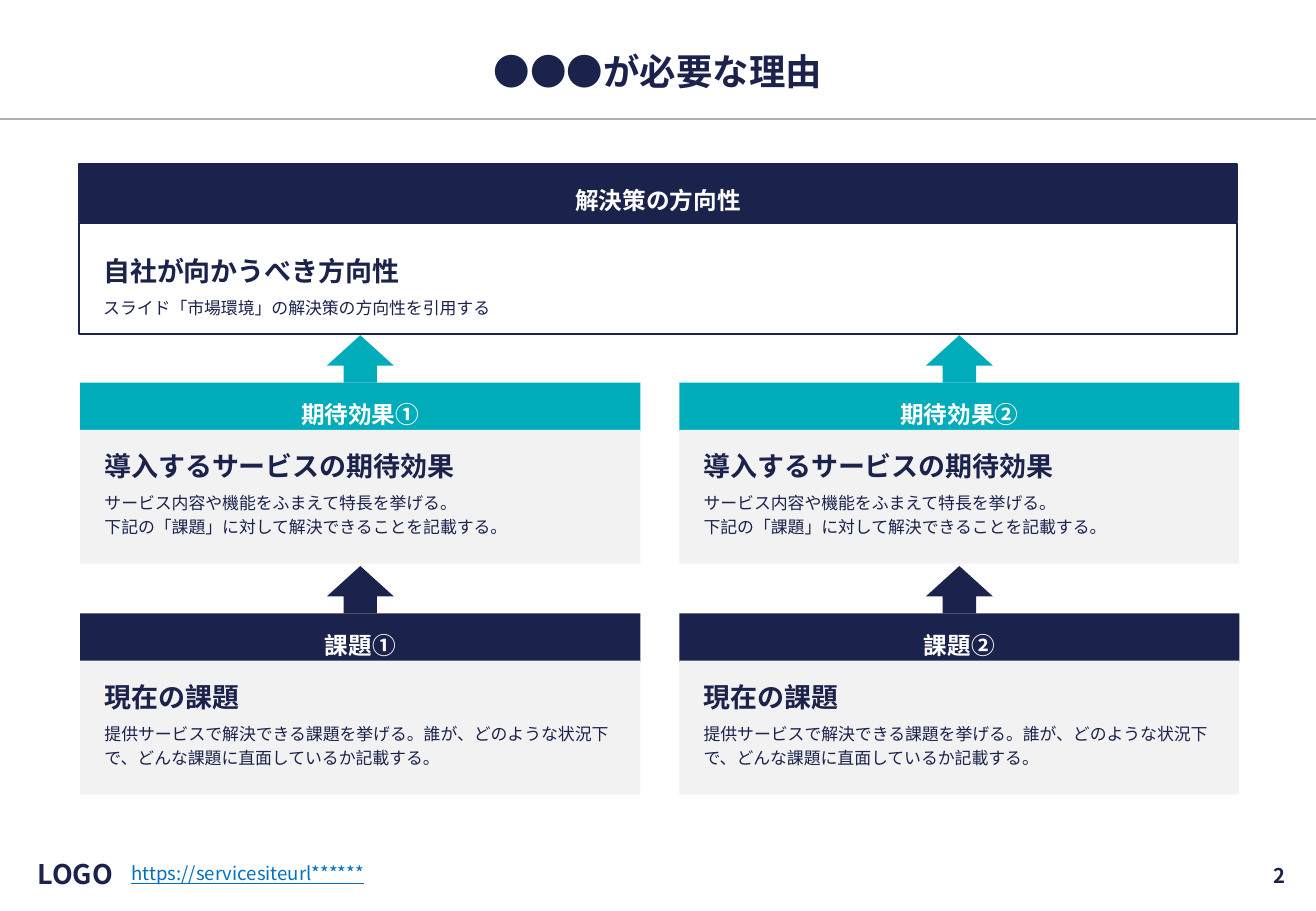
from lxml.etree import SubElement
from pptx import Presentation
from pptx.dml.color import RGBColor
from pptx.enum.shapes import MSO_CONNECTOR, MSO_SHAPE
from pptx.enum.text import MSO_ANCHOR, MSO_AUTO_SIZE, PP_ALIGN
from pptx.oxml.ns import qn
from pptx.util import Inches, Pt

NAVY, TEAL, GREY, WHITE = "1B224C", "00ACBA", "F2F2F2", "FFFFFF"
LINK, RULE = "0070C0", "AFAFAF"
LEFT, CENTER, RIGHT = PP_ALIGN.LEFT, PP_ALIGN.CENTER, PP_ALIGN.RIGHT
TOP, MIDDLE = MSO_ANCHOR.TOP, MSO_ANCHOR.MIDDLE
TIGHT = (0.04, 0.04, 0.04, 0.04)
HEADER = (0.1, 0.05, 0.1, 0.05)


def rgb(value):
    return RGBColor.from_string(value)


def line(text, size, color=NAVY, bold=True, align=LEFT, spacing=1.0, gap=0, underline=False):
    return dict(text=text, size=size, color=color, bold=bold, align=align,
                spacing=spacing, gap=gap, underline=underline)


class SlideBuilder:
    font = "Noto Sans CJK JP"

    def __init__(self, slide):
        self.slide = slide
        self.shapes = slide.shapes

    def set_text(self, sp, lines, insets=HEADER, anchor=MIDDLE):
        tf = sp.text_frame
        tf.word_wrap = True
        tf.auto_size = MSO_AUTO_SIZE.NONE
        tf.vertical_anchor = anchor
        tf.margin_left, tf.margin_top, tf.margin_right, tf.margin_bottom = map(Inches, insets)
        for i, item in enumerate(lines):
            p = tf.add_paragraph() if i else tf.paragraphs[0]
            p.text = item["text"]
            p.alignment = item["align"]
            p.line_spacing = item["spacing"]
            p.space_before = p.space_after = Pt(item["gap"])
            for r in p.runs:
                r.font.size = Pt(item["size"])
                r.font.bold = item["bold"]
                r.font.underline = item["underline"]
                r.font.color.rgb = rgb(item["color"])
                r.font.name = self.font
                SubElement(r._r.get_or_add_rPr(), qn("a:ea")).set("typeface", self.font)

    def title(self, box, text):
        sp = self.shapes.title
        sp.left, sp.top, sp.width, sp.height = map(Inches, box)
        self.set_text(sp, [line(text, 21.6, align=CENTER, spacing=0.9)], (0.04, 0.08, 0.04, 0.04))

    def text(self, box, item, insets=TIGHT, anchor=MIDDLE):
        self.set_text(self.shapes.add_textbox(*map(Inches, box)), [item], insets, anchor)

    def shape(self, box, fill=None, outline=None, kind=MSO_SHAPE.RECTANGLE, parent=None):
        sp = (parent or self.slide).shapes.add_shape(kind, *map(Inches, box))
        sp.shadow.inherit = False
        if fill:
            sp.fill.solid()
            sp.fill.fore_color.rgb = rgb(fill)
        else:
            sp.fill.background()
        if outline:
            sp.line.color.rgb = rgb(outline)
            sp.line.width = Pt(1.5)
        else:
            sp.line.fill.background()
        return sp

    def rule(self, y, width):
        cn = self.shapes.add_connector(MSO_CONNECTOR.STRAIGHT, 0, Inches(y), Inches(width), Inches(y))
        cn.line.color.rgb = rgb(RULE)
        cn.line.width = Pt(0.75)
        SubElement(cn._element.spPr, qn("a:effectLst"))

    def header(self, box, text, color, outline=None, parent=None):
        sp = self.shape(box, color, outline, parent=parent)
        self.set_text(sp, [line(text, 14, WHITE, align=CENTER, spacing=1.5)])

    def card(self, x, y, label, color, heading, detail):
        width = 4.61
        group = self.shapes.add_group_shape()
        self.header((x, y, width, 0.4), label, color, parent=group)
        body = self.shape((x, y + 0.39, width, 1.1), GREY, parent=group)
        self.set_text(body, [line(heading, 16), line(detail, 10, bold=False, spacing=1.2, gap=4)],
                      (0.2, 0.16, 0.2, 0.12), TOP)
        arrow_box = (x + width / 2 - 0.275, y - 0.39, 0.55, 0.39)
        arrow = self.shape(arrow_box, color, kind=MSO_SHAPE.UP_ARROW, parent=group)
        arrow.adjustments[0] = 0.5
        arrow.adjustments[1] = 0.64


def main():
    prs = Presentation()
    prs.slide_width, prs.slide_height = Inches(10.83), Inches(7.5)
    s = SlideBuilder(prs.slides.add_slide(prs.slide_layouts[5]))

    s.rule(0.98, 10.83)
    s.title((0.65, 0.39, 9.53, 0.39), "●●●が必要な理由")

    direction = s.shape((0.65, 1.83, 9.53, 0.92), outline=NAVY)
    s.set_text(direction, [
        line("自社が向かうべき方向性", 16, spacing=1.5),
        line("スライド「市場環境」の解決策の方向性を引用する", 10, bold=False, spacing=1.5),
    ], (0.2, 0.12, 0.2, 0.12))
    s.header((0.65, 1.35, 9.53, 0.47), "解決策の方向性", NAVY, NAVY)

    rows = [
        (3.15, "期待効果", TEAL, "導入するサービスの期待効果",
         "サービス内容や機能をふまえて特長を挙げる。\n下記の「課題」に対して解決できることを記載する。"),
        (5.05, "課題", NAVY, "現在の課題",
         "提供サービスで解決できる課題を挙げる。誰が、どのような状況下で、どんな課題に直面しているか記載する。"),
    ]
    for x, number in ((0.66, "①"), (5.59, "②")):
        for y, label, color, heading, detail in rows:
            s.card(x, y, label + number, color, heading, detail)

    s.text((0.21, 7, 0.82, 0.39), line("LOGO", 16, align=CENTER))
    s.text((1.04, 7.06, 5.75, 0.26),
           line("https://servicesiteurl******", 11, LINK, bold=False, underline=True), anchor=TOP)
    s.text((8.24, 7.01, 2.44, 0.39), line("2", 12, align=RIGHT), HEADER)

    prs.save("out.pptx")


if __name__ == "__main__":
    main()
